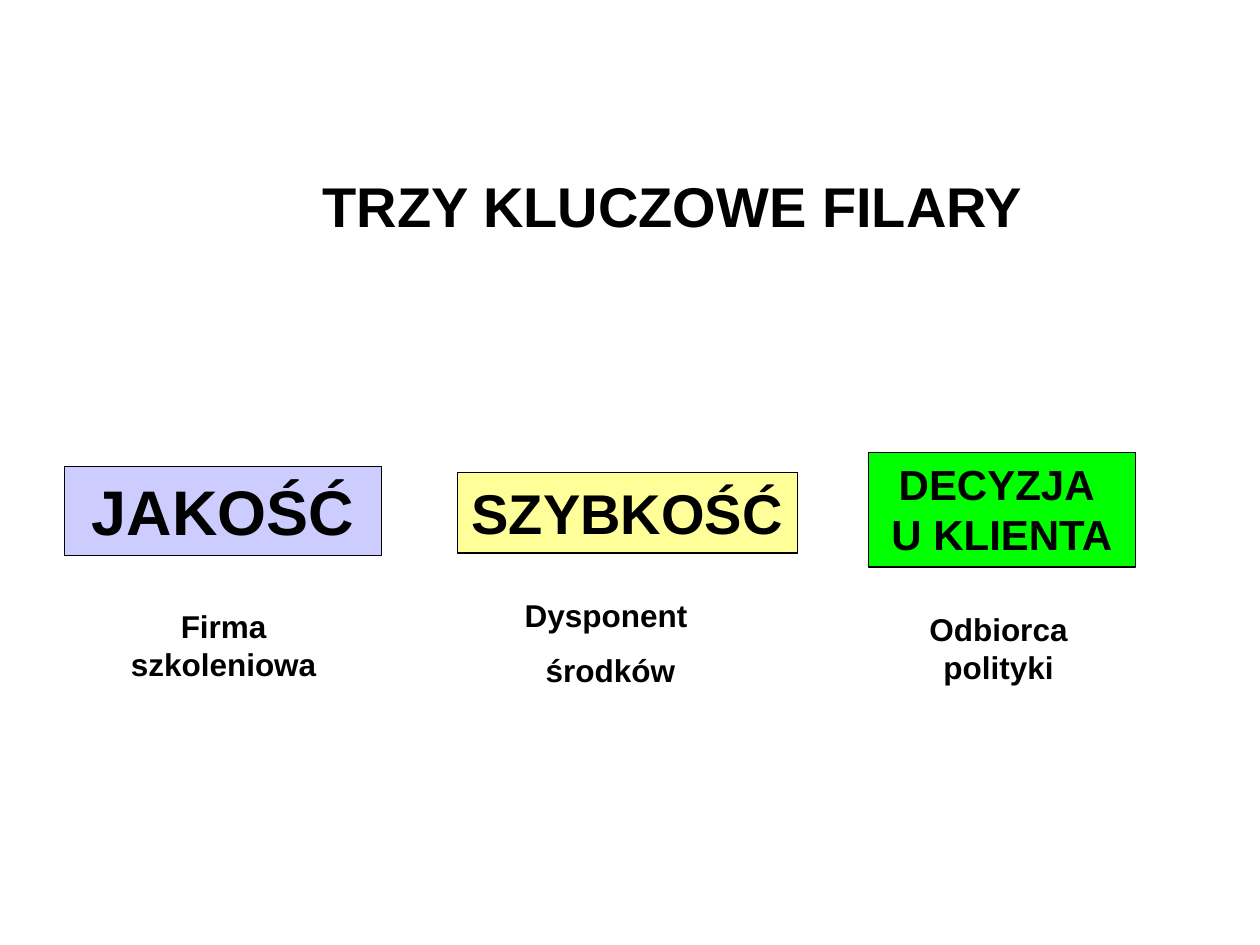
import pptx
import pptx.dml.color
import pptx.enum.shapes
import pptx.enum.text
import pptx.util

Inches, Pt = pptx.util.Inches, pptx.util.Pt
ALIGN = pptx.enum.text.PP_ALIGN

THEME = {
    "font": "Arial",
    "ink": "000000",
    "quality": "CCCCFF",
    "speed": "FFFF99",
    "decision": "00FF00",
    "title_size": 32,
    "caption_size": 18,
    "paragraph_gap": 10,
    "line_width": 0.75,
}

# Each text is a list of paragraphs, each paragraph a list of lines.
TITLE = {"text": [["TRZY KLUCZOWE FILARY"]], "at": (1.61, 1.31, 6.61, 0.63)}
PILLARS = [
    {"text": [["JAKOŚĆ"]], "size": 36, "fill": "quality",
     "at": (0.51, 3.7, 2.52, 0.71),
     "caption": [["Firma szkoleniowa"]], "caption_at": (0.75, 4.77, 2.05, 0.7)},
    {"text": [["SZYBKOŚĆ"]], "size": 32, "fill": "speed",
     "at": (3.63, 3.75, 2.7, 0.64),
     "caption": [["Dysponent "], ["środków"]], "caption_at": (3.82, 4.68, 2.05, 0.85)},
    {"text": [["DECYZJA ", "U KLIENTA"]], "size": 24, "fill": "decision",
     "at": (6.89, 3.59, 2.12, 0.91),
     "caption": [["Odbiorca polityki"]], "caption_at": (6.9, 4.79, 2.05, 0.7)},
]


def color(name):
    return pptx.dml.color.RGBColor.from_string(THEME[name])


def write_text(shape, paragraphs, size, alignment=ALIGN.CENTER):
    frame = shape.text_frame
    frame.word_wrap = True
    frame.vertical_anchor = pptx.enum.text.MSO_ANCHOR.TOP
    for index, lines in enumerate(paragraphs):
        paragraph = frame.add_paragraph() if index else frame.paragraphs[0]
        paragraph.alignment = alignment
        if index:
            paragraph.space_before = Pt(THEME["paragraph_gap"])
        for line_index, line in enumerate(lines):
            if line_index:
                paragraph.add_line_break()
            run = paragraph.add_run()
            run.text = line
            run.font.name = THEME["font"]
            run.font.size = Pt(size)
            run.font.bold = True
            run.font.color.rgb = color("ink")


def add_pillar(slide, pillar):
    shape = slide.shapes.add_shape(
        pptx.enum.shapes.MSO_SHAPE.RECTANGLE, *map(Inches, pillar["at"]))
    shape.shadow.inherit = False
    shape.fill.solid()
    shape.fill.fore_color.rgb = color(pillar["fill"])
    shape.line.color.rgb = color("ink")
    shape.line.width = Pt(THEME["line_width"])
    write_text(shape, pillar["text"], pillar["size"])


def add_label(slide, text, at, size, alignment=ALIGN.CENTER):
    write_text(slide.shapes.add_textbox(*map(Inches, at)), text, size, alignment)


def main():
    presentation = pptx.Presentation()
    presentation.slide_width, presentation.slide_height = Inches(10), Inches(7.5)
    slide = presentation.slides.add_slide(presentation.slide_layouts[6])
    for pillar in PILLARS:
        add_pillar(slide, pillar)
    for pillar in PILLARS:
        add_label(slide, pillar["caption"], pillar["caption_at"], THEME["caption_size"])
    add_label(slide, TITLE["text"], TITLE["at"], THEME["title_size"], ALIGN.RIGHT)
    presentation.save("out.pptx")


if __name__ == "__main__":
    main()
